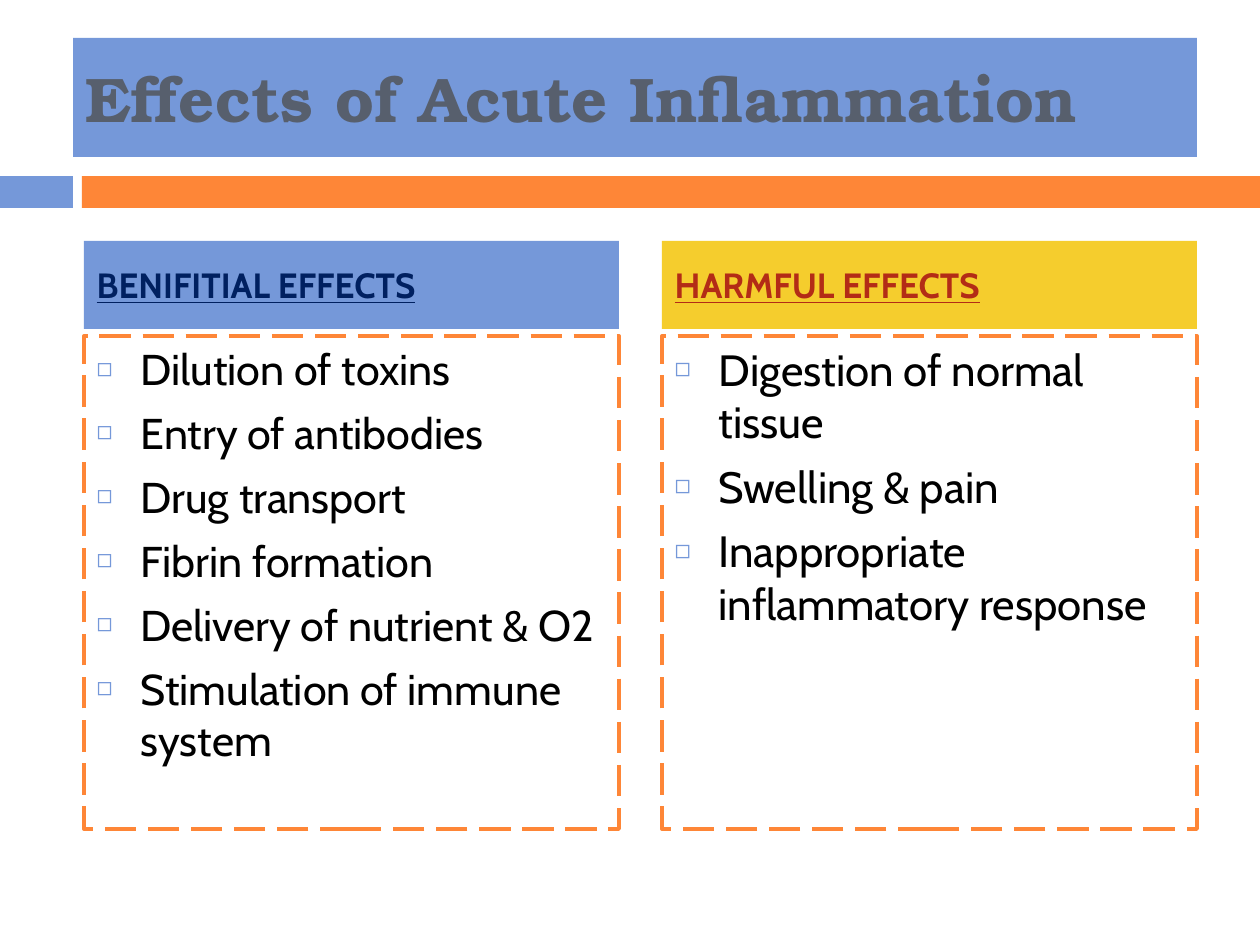
from lxml.etree import SubElement
from pptx import Presentation
from pptx.dml.color import RGBColor
from pptx.enum.dml import MSO_LINE
from pptx.enum.shapes import MSO_SHAPE
from pptx.enum.text import MSO_ANCHOR, MSO_AUTO_SIZE, PP_ALIGN
from pptx.oxml.ns import qn
from pptx.util import Emu, Pt

PX_PER_INCH = 126
BLUE = RGBColor(0x75, 0x98, 0xD9)
ORANGE = RGBColor(0xFE, 0x86, 0x37)
YELLOW = RGBColor(0xF5, 0xCD, 0x2D)
SLATE = RGBColor(0x57, 0x5F, 0x6D)
NAVY = RGBColor(0x00, 0x20, 0x60)
RED = RGBColor(0xB3, 0x2C, 0x16)
BLACK = RGBColor(0x00, 0x00, 0x00)


def px(length):
    return Emu(round(length * 914400 / PX_PER_INCH))


class SlideBuilder:
    title_font = "TeX Gyre Bonum"
    body_font = "Cabin"
    indent = px(44)

    def __init__(self, slide):
        self.slide = slide

    def band(self, left, top, width, height, color):
        bar = self.slide.shapes.add_shape(
            MSO_SHAPE.RECTANGLE, px(left), px(top), px(width), px(height))
        bar.shadow.inherit = False
        bar.fill.solid()
        bar.fill.fore_color.rgb = color
        bar.line.fill.background()

    def place(self, idx, box, lines, anchor, font, size, color):
        """Move a placeholder, fill in its lines and return it."""
        holder = self.slide.placeholders[idx]
        holder.left, holder.top, holder.width, holder.height = map(px, box)
        frame = holder.text_frame
        frame.text = "\n".join(lines)
        frame.word_wrap = True
        frame.auto_size = MSO_AUTO_SIZE.NONE
        frame.vertical_anchor = anchor
        for paragraph in frame.paragraphs:
            paragraph.alignment = PP_ALIGN.LEFT
            paragraph.font.name = font
            paragraph.font.size = Pt(size)
            paragraph.font.color.rgb = color
        return holder

    def header(self, idx, box, text, font, size, color, fill):
        holder = self.place(idx, box, [text], MSO_ANCHOR.MIDDLE, font, size, color)
        holder.fill.solid()
        holder.fill.fore_color.rgb = fill
        paragraph = holder.text_frame.paragraphs[0]
        paragraph.font.bold = True
        return paragraph

    def title(self, box, text):
        self.header(0, box, text, self.title_font, 36, SLATE, BLUE)

    def heading(self, idx, box, text, color, fill):
        paragraph = self.header(idx, box, text, self.body_font, 20, color, fill)
        paragraph.font.underline = True
        paragraph.space_before = Pt(7)

    def bullet_list(self, idx, box, items, size):
        holder = self.place(idx, box, items, MSO_ANCHOR.TOP,
                            self.body_font, size, BLACK)
        holder.line.color.rgb = ORANGE
        holder.line.width = Pt(2.25)
        holder.line.dash_style = MSO_LINE.LONG_DASH
        for paragraph in holder.text_frame.paragraphs:
            paragraph.space_before = Pt(7)
            self.add_bullet(paragraph)

    def add_bullet(self, paragraph):
        properties = paragraph._p.get_or_add_pPr()
        properties.set("marL", str(self.indent))
        properties.set("indent", str(-self.indent))
        bullet_color = SubElement(properties, qn("a:buClr"))
        SubElement(bullet_color, qn("a:srgbClr"), val=str(BLUE))
        SubElement(properties, qn("a:buSzPct"), val="60000")
        SubElement(properties, qn("a:buChar"), char="◻")


def main():
    deck = Presentation()
    deck.slide_width, deck.slide_height = px(1260), px(945)
    comparison_layout = deck.slide_layouts[4]
    builder = SlideBuilder(deck.slides.add_slide(comparison_layout))

    builder.band(0, 176, 73, 32, BLUE)
    builder.band(82, 176, 1178, 32, ORANGE)
    builder.title((73, 38, 1124, 119), "Effects of Acute Inflammation")

    effects = [
        ("BENIFITIAL EFFECTS", NAVY, BLUE, 24.6,
         ["Dilution of toxins", "Entry of antibodies", "Drug transport",
          "Fibrin formation", "Delivery of nutrient & O2",
          "Stimulation of immune system"]),
        ("HARMFUL EFFECTS", RED, YELLOW, 25,
         ["Digestion of normal tissue", "Swelling & pain",
          "Inappropriate inflammatory response"]),
    ]
    for column, (heading, color, fill, size, items) in enumerate(effects):
        left = 84 + 578 * column
        heading_idx = 1 + 2 * column
        builder.heading(heading_idx, (left, 241, 535, 88), heading, color, fill)
        builder.bullet_list(heading_idx + 1, (left, 336, 535, 493), items, size)

    deck.save("out.pptx")


if __name__ == "__main__":
    main()
